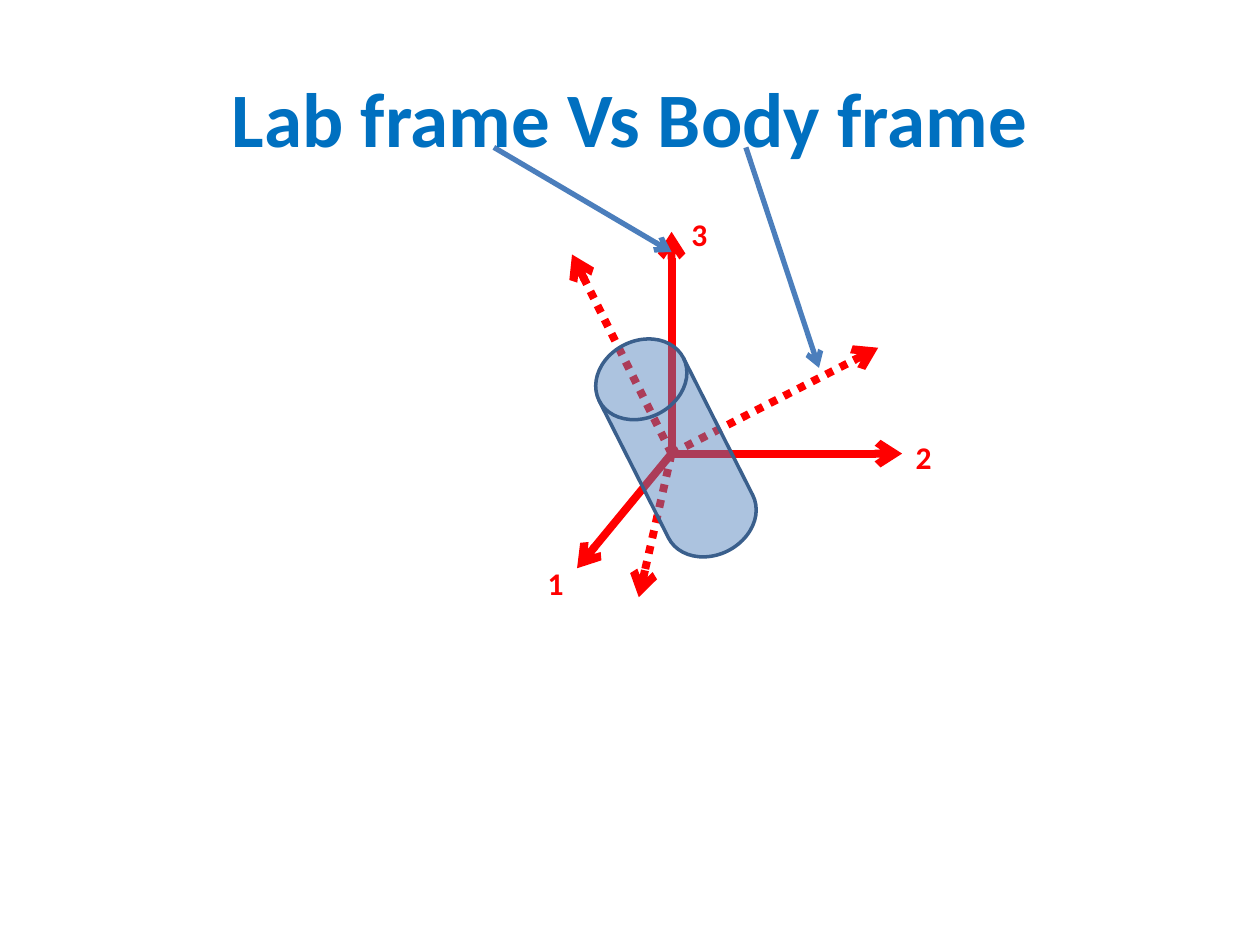
"""Build a slide that compares the lab frame and the body frame of a cylinder."""
from lxml.etree import SubElement
from pptx import Presentation
from pptx.dml.color import RGBColor
from pptx.enum.dml import MSO_LINE
from pptx.enum.shapes import MSO_CONNECTOR, MSO_SHAPE
from pptx.enum.text import MSO_ANCHOR, PP_ALIGN
from pptx.oxml.ns import qn
from pptx.util import Inches, Pt


def paint(color_format, hex_color):
    color_format.rgb = RGBColor.from_string(hex_color)


deck = Presentation()
deck.slide_width, deck.slide_height = Inches(10), Inches(7.5)
COL, ROW = deck.slide_width / 100, deck.slide_height / 75
slide = deck.slides.add_slide(deck.slide_layouts[6])
shapes = slide.shapes

RED, STEEL, BLUE = "FF0000", "4B7EBC", "0070C0"
ORIGIN = (53.3, 36)
lab_axes = [(71.6, 36), (45.8, 45.1), (53.3, 18.4)]
body_axes = [(69.7, 27.6), (50.7, 47.4), (45.4, 20.2)]
title_pointers = [((39.2, 11.7), (53.3, 20)), ((59.2, 11.7), (65, 29.2))]

arrows = [(ORIGIN, tip, RED, 4.5, None) for tip in lab_axes]
arrows += [(ORIGIN, tip, RED, 4.5, MSO_LINE.ROUND_DOT) for tip in body_axes]
arrows += [(start, tip, STEEL, 3, None) for start, tip in title_pointers]

labels = [
    ("2", 71.6, 34.3, 3.4, 4, 18, RED),
    ("1", 42.4, 44.3, 3.4, 4, 18, RED),
    ("3", 53.8, 16.6, 3.4, 4, 18, RED),
    ("Lab frame Vs Body frame", 5, 3, 90, 12.5, 44, BLUE),
]

for index, (start, tip, color, weight, dash) in enumerate(arrows):
    if index == len(lab_axes) + len(body_axes):
        cylinder = shapes.add_shape(
            MSO_SHAPE.FLOWCHART_MAGNETIC_DISK,
            int(49.9 * COL), int(26.4 * ROW), int(7.5 * COL), int(18.3 * ROW))
        cylinder.rotation = 333.2
        cylinder.shadow.inherit = False
        cylinder.fill.solid()
        paint(cylinder.fill.fore_color, "4F81BD")
        tint = cylinder.fill._xPr.find(qn("a:solidFill"))[0]
        SubElement(tint, qn("a:alpha"), val="47000")
        paint(cylinder.line.color, "3A5F8C")
        cylinder.line.width = Pt(2)
    arrow = shapes.add_connector(
        MSO_CONNECTOR.STRAIGHT,
        int(start[0] * COL), int(start[1] * ROW), int(tip[0] * COL), int(tip[1] * ROW))
    paint(arrow.line.color, color)
    arrow.line.width = Pt(weight)
    if dash:
        arrow.line.dash_style = dash
    SubElement(arrow.line._get_or_add_ln(), qn("a:tailEnd"), type="arrow")
    SubElement(arrow._element.spPr, qn("a:effectLst"))

for words, left, top, width, height, size, color in labels:
    label = shapes.add_textbox(
        int(left * COL), int(top * ROW), int(width * COL), int(height * ROW))
    frame = label.text_frame
    frame.word_wrap = True
    frame.vertical_anchor = MSO_ANCHOR.MIDDLE
    paragraph = frame.paragraphs[0]
    paragraph.alignment = PP_ALIGN.CENTER
    run = paragraph.add_run()
    run.text = words
    run.font.name = "Calibri"
    run.font.size = Pt(size)
    run.font.bold = True
    paint(run.font.color, color)

deck.save("out.pptx")
